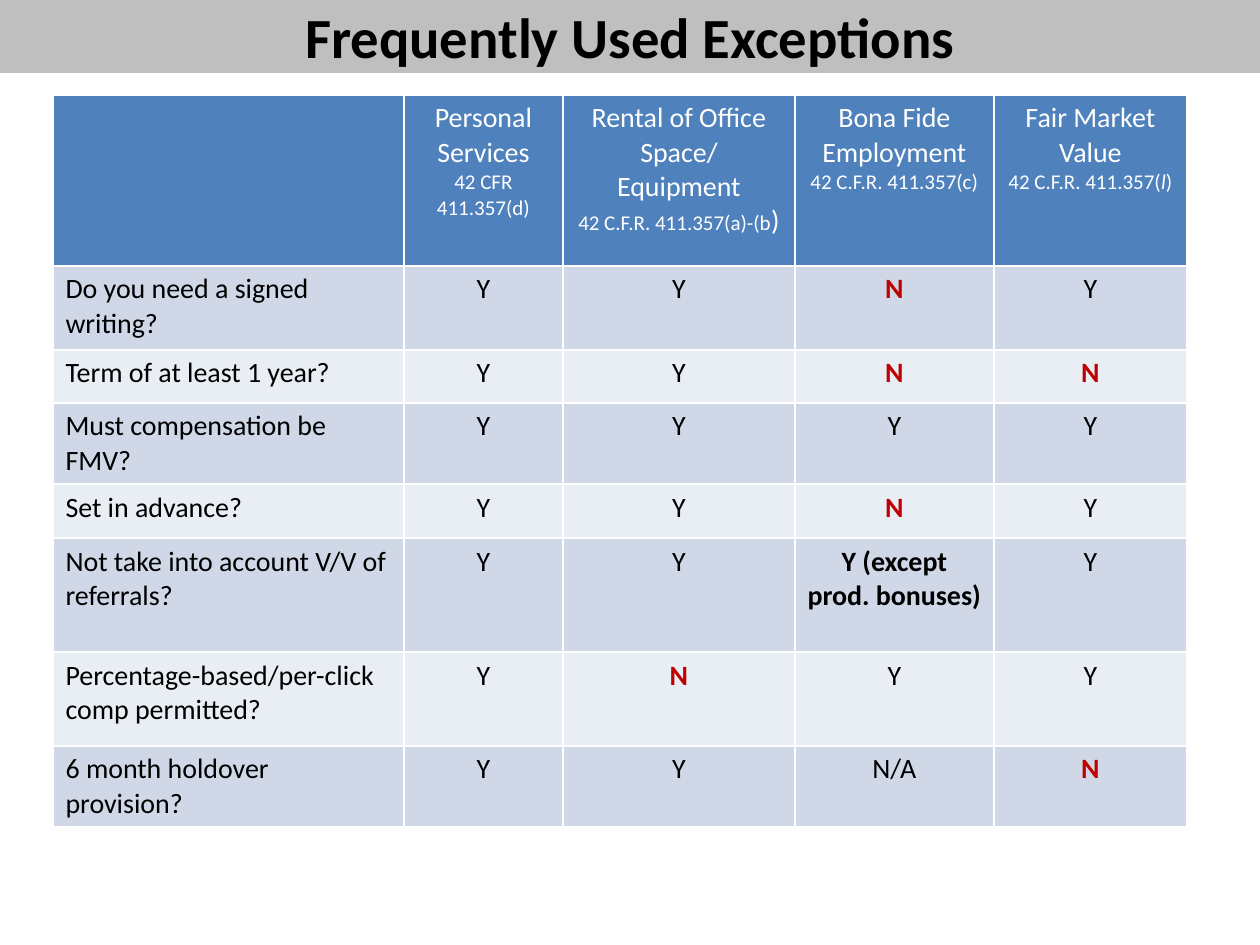
import dataclasses

import pptx
import pptx.dml.color
import pptx.enum.text
import pptx.util

PX_PER_INCH = 126
CENTER = pptx.enum.text.PP_ALIGN.CENTER
LEFT = pptx.enum.text.PP_ALIGN.LEFT


@dataclasses.dataclass(frozen=True)
class Theme:
    font: str = "Calibri"
    title_size: float = 32.4
    body_size: float = 16
    citation_size: float = 12
    ink: str = "000000"
    paper: str = "FFFFFF"
    alert: str = "C00000"
    title_band: str = "BFBFBF"
    header: str = "4F81BD"
    row_bands: tuple = ("D0D8E8", "E9EDF4")


def px(count):
    return pptx.util.Emu(round(count * 914400 / PX_PER_INCH))


def rgb(code):
    return pptx.dml.color.RGBColor.from_string(code)


class SlideBuilder:
    def __init__(self, page, theme):
        self.page = page
        self.theme = theme

    def style(self, para, size, color, bold=False, align=CENTER):
        para.alignment = align
        font = para.font
        font.name, font.size, font.bold = self.theme.font, pptx.util.Pt(size), bold
        font.color.rgb = rgb(color)

    def fill(self, target, color):
        target.fill.solid()
        target.fill.fore_color.rgb = rgb(color)

    def title(self, text, left, top, width, height):
        box = self.page.shapes.title
        box.left, box.top, box.width, box.height = map(px, (left, top, width, height))
        self.fill(box, self.theme.title_band)
        frame = box.text_frame
        frame.text = text
        frame.auto_size = pptx.enum.text.MSO_AUTO_SIZE.NONE
        frame.vertical_anchor = pptx.enum.text.MSO_ANCHOR.MIDDLE
        self.style(frame.paragraphs[0], self.theme.title_size, self.theme.ink, bold=True)

    def table(self, left, top, widths, heights):
        frame = self.page.shapes.add_table(
            len(heights), len(widths), px(left), px(top), px(sum(widths)), px(sum(heights)))
        for column, width in zip(frame.table.columns, widths):
            column.width = px(width)
        for row, height in zip(frame.table.rows, heights):
            row.height = px(height)
        return frame.table

    def header_cell(self, cell, heading, citation):
        """Write a heading over a citation given as (text, font changes) spans."""
        self.fill(cell, self.theme.header)
        if not heading:
            return
        frame = cell.text_frame
        frame.text = heading
        self.style(frame.paragraphs[0], self.theme.body_size, self.theme.paper)
        para = frame.add_paragraph()
        self.style(para, self.theme.citation_size, self.theme.paper)
        for text, changes in citation:
            span = para.add_run()
            span.text = text
            for name, value in changes.items():
                setattr(span.font, name, value)

    def body_cell(self, cell, text, band, align):
        self.fill(cell, band)
        cell.text = text
        color = self.theme.alert if text == "N" else self.theme.ink
        bold = text == "N" or text.startswith("Y (")
        self.style(cell.text_frame.paragraphs[0], self.theme.body_size, color, bold, align)


THEME = Theme()
HEADINGS = [
    ("", []),
    ("Personal Services", [("42 CFR 411.357(d)", {})]),
    ("Rental of Office Space/ Equipment",
     [("42 C.F.R. 411.357(a)-(b", {}), (")", {"size": pptx.util.Pt(THEME.body_size)})]),
    ("Bona Fide Employment", [("42 C.F.R. 411.357(c)", {})]),
    ("Fair Market Value",
     [("42 C.F.R. 411.357(", {}), ("l", {"italic": True}), (")", {})]),
]
QUESTIONS = [
    ("Do you need a signed writing?", "Y", "Y", "N", "Y"),
    ("Term of at least 1 year?", "Y", "Y", "N", "N"),
    ("Must compensation be FMV?", "Y", "Y", "Y", "Y"),
    ("Set in advance?", "Y", "Y", "N", "Y"),
    ("Not take into account V/V of referrals?", "Y", "Y", "Y (except prod. bonuses)", "Y"),
    ("Percentage-based/per-click comp permitted?", "Y", "N", "Y", "Y"),
    ("6 month holdover provision?", "Y", "Y", "N/A", "N"),
]
COLUMN_WIDTHS = [351, 159, 232, 199, 193]
ROW_HEIGHTS = [171, 84, 53, 81, 54, 114, 94, 80]


def main():
    deck = pptx.Presentation()
    deck.slide_width, deck.slide_height = px(1260), px(945)
    page = deck.slides.add_slide(deck.slide_layouts.get_by_name("Title Only"))
    builder = SlideBuilder(page, THEME)

    builder.title("Frequently Used Exceptions", 0, -1, 1260, 74)
    table = builder.table(53, 95, COLUMN_WIDTHS, ROW_HEIGHTS)
    for column, (heading, citation) in enumerate(HEADINGS):
        builder.header_cell(table.cell(0, column), heading, citation)
    for row, answers in enumerate(QUESTIONS):
        band = THEME.row_bands[row % 2]
        for column, text in enumerate(answers):
            align = CENTER if column else LEFT
            builder.body_cell(table.cell(row + 1, column), text, band, align)

    deck.save("out.pptx")


if __name__ == "__main__":
    main()
